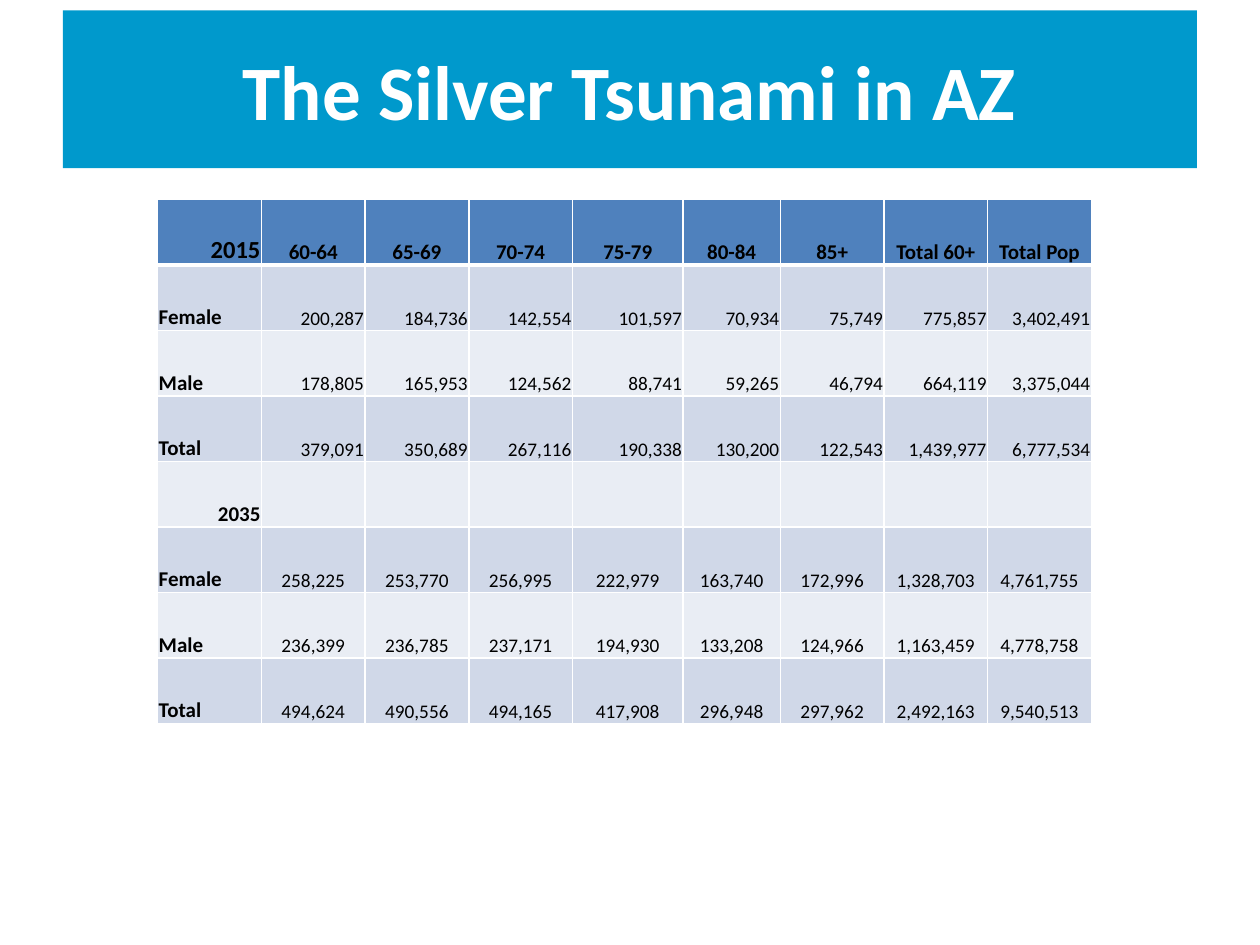
from lxml.etree import fromstring
from pptx import Presentation
from pptx.dml.color import RGBColor as RGB
from pptx.enum.shapes import MSO_SHAPE as SHAPE
from pptx.enum.text import MSO_ANCHOR as ANCHOR, PP_ALIGN as ALIGN
from pptx.util import Cm, Pt

TITLE = "The Silver Tsunami in AZ"
HEADER = ["2015", "60-64", "65-69", "70-74", "75-79", "80-84", "85+", "Total 60+", "Total Pop"]
ROWS_2015 = [
    ["Female", "200,287", "184,736", "142,554", "101,597", "70,934", "75,749", "775,857", "3,402,491"],
    ["Male", "178,805", "165,953", "124,562", "88,741", "59,265", "46,794", "664,119", "3,375,044"],
    ["Total", "379,091", "350,689", "267,116", "190,338", "130,200", "122,543", "1,439,977", "6,777,534"],
]
YEAR_ROW = ["2035"] + [""] * 8
ROWS_2035 = [
    ["Female", "258,225", "253,770", "256,995", "222,979", "163,740", "172,996", "1,328,703", "4,761,755"],
    ["Male", "236,399", "236,785", "237,171", "194,930", "133,208", "124,966", "1,163,459", "4,778,758"],
    ["Total", "494,624", "490,556", "494,165", "417,908", "296,948", "297,962", "2,492,163", "9,540,513"],
]
ROWS = [HEADER, *ROWS_2015, YEAR_ROW, *ROWS_2035]
YEAR_2035 = ROWS.index(YEAR_ROW)
COL_WIDTHS = [2.09] * 4 + [2.23, 1.96] + [2.09] * 3
ROW_HEIGHT = 1.32

THEME = {
    "font": "Calibri",
    "banner": "0099CC", "header": "4F81BD", "bands": ["E9EDF4", "D0D8E8"],
    "light": "FFFFFF", "dark": "000000",
    "title": 44, "first_year": 14, "label": 12, "value": 11,
    "thin": 1, "thick": 3,
}
NS = "http://schemas.openxmlformats.org/drawingml/2006/main"


def paint(obj, color):
    obj.fill.solid()
    obj.fill.fore_color.rgb = RGB.from_string(color)


def write(tf, text, size, color, bold, align):
    p = tf.paragraphs[0]
    p.alignment = align
    r = p.add_run()
    r.text = text
    r.font.name = THEME["font"]
    r.font.size = Pt(size)
    r.font.bold = bold
    r.font.color.rgb = RGB.from_string(color)


def set_borders(cell, top, bottom):
    tc_pr = cell._tc.get_or_add_tcPr()
    widths = {"L": THEME["thin"], "R": THEME["thin"], "T": top, "B": bottom}
    for i, (side, width) in enumerate(widths.items()):
        tc_pr.insert(i, fromstring(
            f'<a:ln{side} xmlns:a="{NS}" w="{Pt(width)}"><a:solidFill>'
            f'<a:srgbClr val="{THEME["light"]}"/></a:solidFill></a:ln{side}>'))


def cell_style(row, col):
    if col == 0:
        is_year = row in (0, YEAR_2035)
        size = THEME["first_year"] if row == 0 else THEME["label"]
        return size, True, ALIGN.RIGHT if is_year else ALIGN.LEFT
    if row == 0:
        return THEME["label"], True, ALIGN.CENTER
    return THEME["value"], False, ALIGN.RIGHT if row < YEAR_2035 else ALIGN.CENTER


def add_banner(s):
    sp = s.shapes.add_shape(SHAPE.RECTANGLE, Cm(1.27), Cm(0.21), Cm(22.86), Cm(3.18))
    sp.shadow.inherit = False
    paint(sp, THEME["banner"])
    sp.line.fill.background()
    tf = sp.text_frame
    tf.word_wrap = True
    tf.vertical_anchor = ANCHOR.MIDDLE
    write(tf, TITLE, THEME["title"], THEME["light"], True, ALIGN.CENTER)


def add_population_table(s):
    table = s.shapes.add_table(
        len(ROWS), len(HEADER), Cm(3.18), Cm(4.02),
        Cm(sum(COL_WIDTHS)), Cm(ROW_HEIGHT * len(ROWS))).table
    for column, width in zip(table.columns, COL_WIDTHS):
        column.width = Cm(width)
    for i, values in enumerate(ROWS):
        table.rows[i].height = Cm(ROW_HEIGHT)
        top = THEME["thick"] if i == 1 else THEME["thin"]
        bottom = THEME["thick"] if i == 0 else THEME["thin"]
        for j, text in enumerate(values):
            cell = table.cell(i, j)
            paint(cell, THEME["bands"][i % 2] if i else THEME["header"])
            set_borders(cell, top, bottom)
            cell.vertical_anchor = ANCHOR.BOTTOM
            cell.margin_left = cell.margin_right = cell.margin_top = Cm(0.02)
            cell.margin_bottom = 0
            if text:
                size, bold, align = cell_style(i, j)
                write(cell.text_frame, text, size, THEME["dark"], bold, align)


def main():
    prs = Presentation()
    prs.slide_width, prs.slide_height = Cm(25.4), Cm(19.05)
    s = prs.slides.add_slide(prs.slide_layouts[6])
    add_banner(s)
    add_population_table(s)
    prs.save("out.pptx")


if __name__ == "__main__":
    main()
